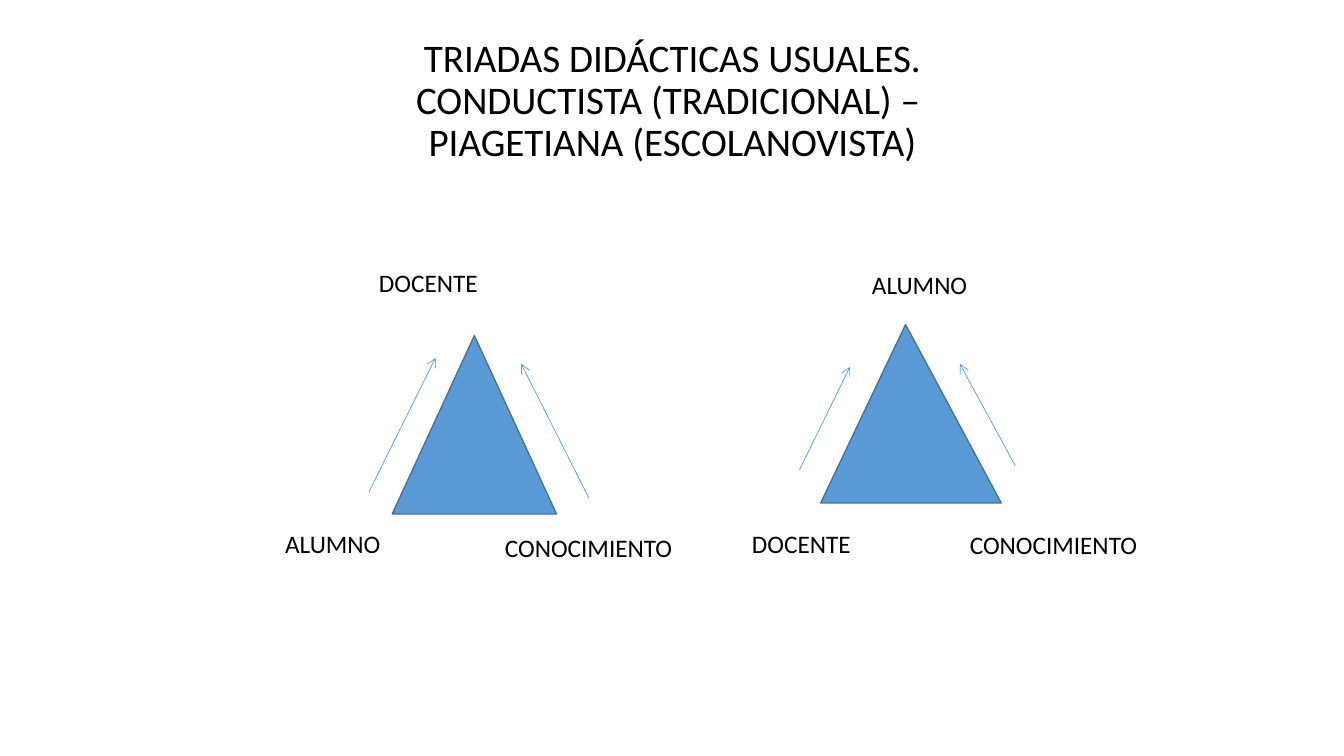
from dataclasses import dataclass

from lxml import etree
from pptx import Presentation
from pptx.dml.color import RGBColor
from pptx.enum import shapes, text
from pptx.oxml.ns import qn
from pptx.util import Inches, Pt


@dataclass(frozen=True)
class Theme:
    font: str = "Calibri"
    ink: RGBColor = RGBColor(0x00, 0x00, 0x00)
    fill: RGBColor = RGBColor(0x5B, 0x9B, 0xD5)
    edge: RGBColor = RGBColor(0x43, 0x73, 0x9E)
    title_size: float = 27.9
    label_size: float = 18
    edge_width: float = 1
    arrow_width: float = 0.5


THEME = Theme()

HEADING = [
    "TRIADAS DIDÁCTICAS USUALES.",
    "CONDUCTISTA (TRADICIONAL) – ",
    "PIAGETIANA (ESCOLANOVISTA)",
]
HEADING_BOX = (2.17, 0.3, 9, 1.68)

TRIADS = [
    {
        "triangle": (3.89, 3.33, 1.63, 1.77),
        "apex": 0.5,
        "arrows": [(3.66, 4.88, 4.32, 3.55), (5.84, 4.94, 5.17, 3.61)],
        "labels": [
            ("DOCENTE", (3.66, 2.6, 1.19, 0.4), False),
            ("ALUMNO", (2.73, 5.19, 1.42, 0.4), True),
            ("CONOCIMIENTO", (4.91, 5.23, 2.2, 0.4), True),
        ],
    },
    {
        "triangle": (8.14, 3.22, 1.79, 1.77),
        "apex": 0.47,
        "arrows": [(7.93, 4.66, 8.43, 3.64), (10.07, 4.62, 9.52, 3.61)],
        "labels": [
            ("ALUMNO", (8.55, 2.62, 1.16, 0.4), False),
            ("DOCENTE", (7.36, 5.19, 1.57, 0.71), True),
            ("CONOCIMIENTO", (9.52, 5.2, 2.15, 0.4), True),
        ],
    },
]


def inches(values):
    return [Inches(value) for value in values]


def style_text(paragraph, size):
    for run in paragraph.runs:
        run.font.name = THEME.font
        run.font.size = Pt(size)
        run.font.color.rgb = THEME.ink


def add_heading(slide):
    heading = slide.shapes.title
    heading.left, heading.top, heading.width, heading.height = inches(HEADING_BOX)
    frame = heading.text_frame
    frame.text = "\v".join(HEADING)
    frame.auto_size = text.MSO_AUTO_SIZE.NONE
    frame.vertical_anchor = text.MSO_ANCHOR.MIDDLE
    frame.margin_bottom = Inches(0.31)
    paragraph = frame.paragraphs[0]
    paragraph.alignment = text.PP_ALIGN.CENTER
    paragraph.line_spacing = 0.9
    style_text(paragraph, THEME.title_size)


def add_triangle(slide, box, apex):
    triangle = slide.shapes.add_shape(
        shapes.MSO_SHAPE.ISOSCELES_TRIANGLE, *inches(box)
    )
    triangle.adjustments[0] = apex
    triangle.shadow.inherit = False
    triangle.fill.solid()
    triangle.fill.fore_color.rgb = THEME.fill
    triangle.line.color.rgb = THEME.edge
    triangle.line.width = Pt(THEME.edge_width)


def add_arrow(slide, ends):
    arrow = slide.shapes.add_connector(shapes.MSO_CONNECTOR.STRAIGHT, *inches(ends))
    arrow.line.color.rgb = THEME.fill
    arrow.line.width = Pt(THEME.arrow_width)
    etree.SubElement(arrow.line._get_or_add_ln(), qn("a:tailEnd"), type="arrow")
    etree.SubElement(arrow._element.spPr, qn("a:effectLst"))


def add_label(slide, wording, box, wraps):
    label = slide.shapes.add_textbox(*inches(box))
    frame = label.text_frame
    frame.text = wording
    frame.word_wrap = wraps
    style_text(frame.paragraphs[0], THEME.label_size)


def main():
    deck = Presentation()
    deck.slide_width, deck.slide_height = inches((13.33, 7.5))
    slide = deck.slides.add_slide(deck.slide_layouts[5])
    add_heading(slide)
    for triad in TRIADS:
        add_triangle(slide, triad["triangle"], triad["apex"])
        for ends in triad["arrows"]:
            add_arrow(slide, ends)
        for label in triad["labels"]:
            add_label(slide, *label)
    deck.save("out.pptx")


if __name__ == "__main__":
    main()
